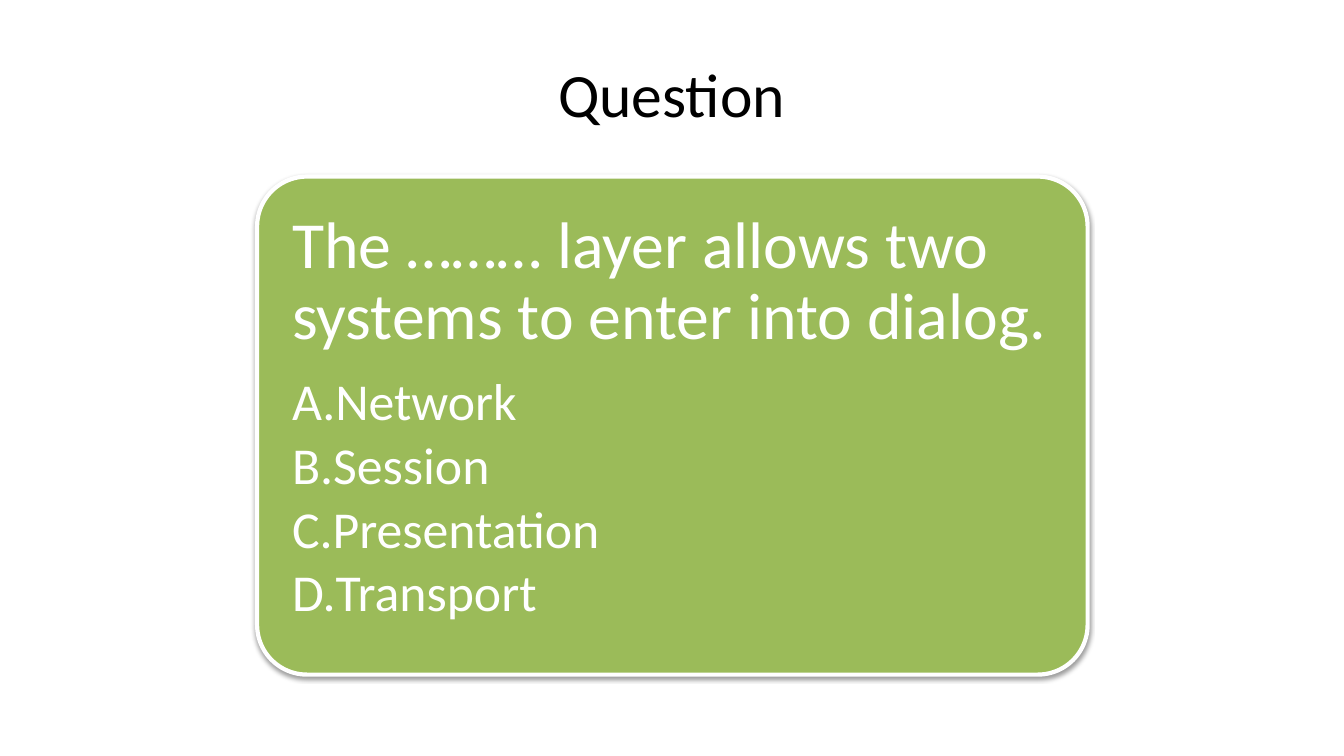
from lxml import etree
from pptx import Presentation
from pptx.dml.color import RGBColor
from pptx.enum import shapes, text
from pptx.oxml import ns
from pptx.util import Cm, Pt

# Content
TITLE = "Question"
QUESTION = "The ……… layer allows two systems to enter into dialog."
ANSWERS = ["Network", "Session", "Presentation", "Transport"]

# Style and layout, lengths in cm
FONT = "Calibri"
BLACK, WHITE, GREEN = "000000", "FFFFFF", "9BBB59"
SLIDE_W, SLIDE_H = 33.87, 19.05
TITLE_BOX = (1.69, 0.76, 30.48, 3.18)
CARD = (6.48, 4.45, 20.93, 12.55)
CARD_PAD, TEXT_INSET, INDENT = 0.37, 0.51, 0.79


def color(value):
    return RGBColor.from_string(value)


def add_xml(parent, tag, **attrs):
    return etree.SubElement(parent, ns.qn(tag), attrs)


def style(p, size, hue):
    p.font.name, p.font.size = FONT, Pt(size)
    p.font.color.rgb = color(hue)


def add_text(s, box, inset):
    tf = s.shapes.add_textbox(*map(Cm, box)).text_frame
    tf.word_wrap = True
    tf.margin_left = tf.margin_right = Cm(inset)
    tf.margin_top = tf.margin_bottom = Cm(inset)
    return tf


def add_card(s):
    sp = s.shapes.add_shape(shapes.MSO_SHAPE.ROUNDED_RECTANGLE, *map(Cm, CARD))
    sp.adjustments[0] = 0.1
    sp.fill.solid()
    sp.fill.fore_color.rgb = color(GREEN)
    sp.line.color.rgb = color(WHITE)
    sp.line.width = Pt(3)
    # Soft shadow straight below
    sp.shadow.inherit = False
    effects = sp.element.spPr.find(ns.qn("a:effectLst"))
    shadow = add_xml(effects, "a:outerShdw", blurRad=str(Pt(3.1)),
                     dist=str(Pt(1.6)), dir="5400000", rotWithShape="0")
    add_xml(add_xml(shadow, "a:srgbClr", val=BLACK), "a:alpha", val="38000")


def add_answer(tf, answer):
    p = tf.add_paragraph()
    p.text, p.level = answer, 1
    p.line_spacing, p.space_after = 0.9, Pt(5.5)
    pPr = p._p.get_or_add_pPr()
    pPr.set("marL", str(Cm(INDENT)))
    pPr.set("indent", str(-Cm(INDENT)))
    add_xml(pPr, "a:buAutoNum", type="alphaUcPeriod")
    style(p, 37, WHITE)


def main():
    prs = Presentation()
    prs.slide_width, prs.slide_height = Cm(SLIDE_W), Cm(SLIDE_H)
    s = prs.slides.add_slide(prs.slide_layouts[6])

    # Title
    tf = add_text(s, TITLE_BOX, 0.2)
    tf.vertical_anchor = text.MSO_ANCHOR.MIDDLE
    p = tf.paragraphs[0]
    p.text, p.alignment = TITLE, text.PP_ALIGN.CENTER
    style(p, 44, BLACK)

    # Question card
    add_card(s)
    x, y, w, h = CARD
    inner = (x + CARD_PAD, y + CARD_PAD, w - 2 * CARD_PAD, h - 2 * CARD_PAD)
    tf = add_text(s, inner, TEXT_INSET)
    p = tf.paragraphs[0]
    p.text = QUESTION
    p.line_spacing, p.space_after = 0.9, Pt(16)
    style(p, 47, WHITE)
    for answer in ANSWERS:
        add_answer(tf, answer)

    prs.save("out.pptx")


if __name__ == "__main__":
    main()
